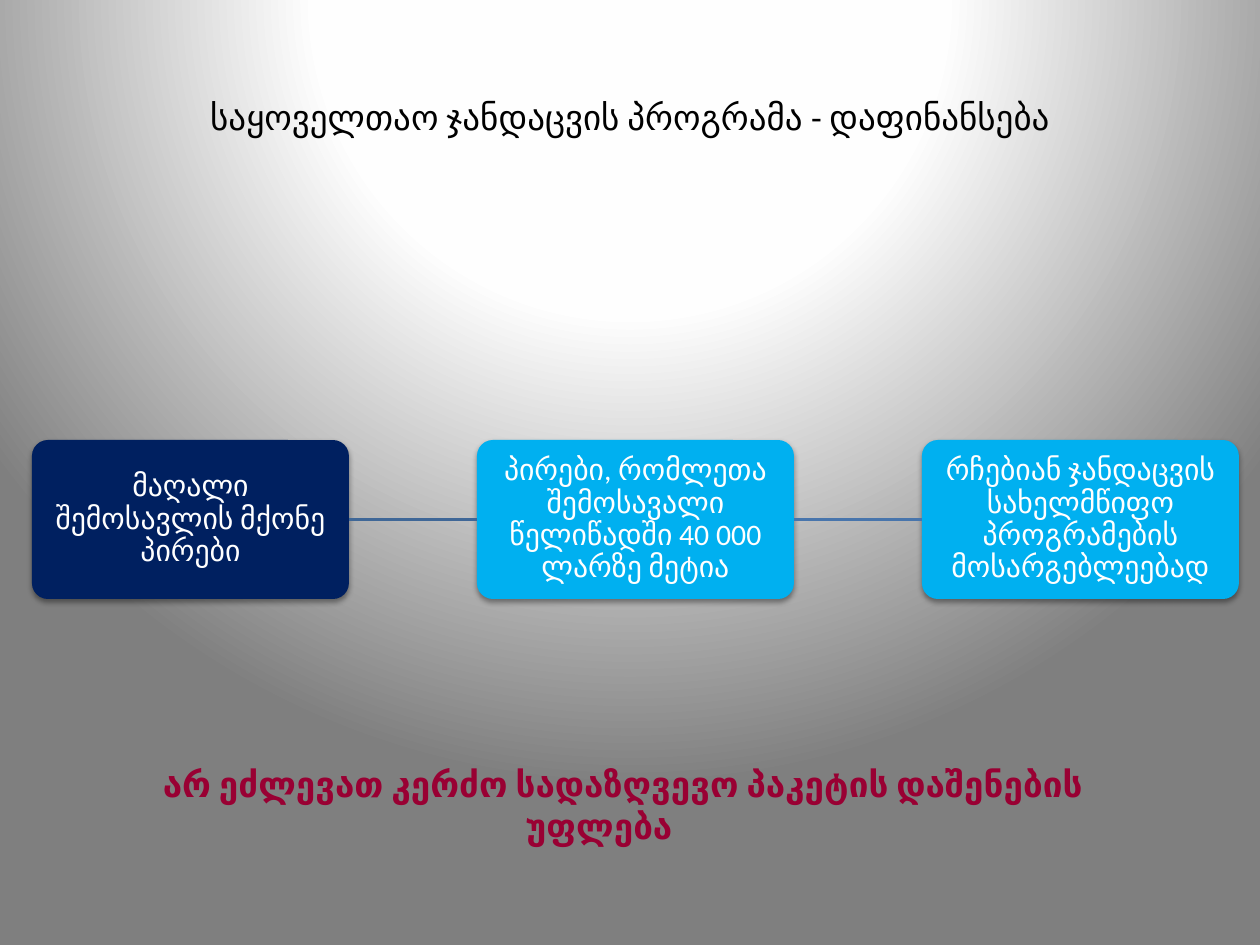
import pptx
import pptx.dml.color
import pptx.enum.shapes
import pptx.enum.text
import pptx.oxml
import pptx.oxml.ns
import pptx.util

PX = 914400 // 126
NS = pptx.oxml.ns.nsdecls("a", "p")
ANCHOR = pptx.enum.text.MSO_ANCHOR


def rgb(code):
    return pptx.dml.color.RGBColor.from_string(code)


def write(sp, text, size=20, color="000000", bold=False, anchor=ANCHOR.MIDDLE,
          margins=(13, 6, 13, 6), spacing=1.0, indent=0):
    """Fill a shape with one centred paragraph; margins are left, top, right, bottom."""
    tf = sp.text_frame
    tf.word_wrap = True
    tf.vertical_anchor = anchor
    tf.margin_left, tf.margin_top, tf.margin_right, tf.margin_bottom = [m * PX for m in margins]
    p = tf.paragraphs[0]
    p.alignment = pptx.enum.text.PP_ALIGN.CENTER
    p.line_spacing = spacing
    if indent:
        p._p.get_or_add_pPr().set("indent", str(indent * PX))
    r = p.add_run()
    r.text = text
    r.font.name = "Calibri"
    r.font.size = pptx.util.Pt(size)
    r.font.bold = bold
    r.font.color.rgb = rgb(color)


prs = pptx.Presentation()
prs.slide_width = pptx.util.Inches(10)
prs.slide_height = pptx.util.Inches(7.5)
s = prs.slides.add_slide(prs.slide_layouts[6])

# Background: light falling from above the slide
s.element.cSld.insert(0, pptx.oxml.parse_xml(f"""
<p:bg {NS}><p:bgPr><a:gradFill rotWithShape="1"><a:gsLst>
  <a:gs pos="0"><a:srgbClr val="FFFFFF"/></a:gs>
  <a:gs pos="40000"><a:srgbClr val="FEFEFE"/></a:gs>
  <a:gs pos="100000"><a:srgbClr val="7F7F7F"/></a:gs>
</a:gsLst><a:path path="circle">
  <a:fillToRect l="50000" t="-80000" r="50000" b="180000"/>
</a:path></a:gradFill><a:effectLst/></p:bgPr></p:bg>"""))

# Title
title = s.shapes.add_textbox(63 * PX, 38 * PX, 1134 * PX, 157 * PX)
write(title, "საყოველთაო ჯანდაცვის პროგრამა - დაფინანსება")

# Chain of three boxes
LEFT, TOP, WIDTH, HEIGHT, STEP = 32, 440, 317, 159, 445
steps = [
    ("მაღალი შემოსავლის მქონე პირები", "002060"),
    ("პირები, რომლეთა შემოსავალი წელიწადში 40 000 ლარზე მეტია", "00B0F0"),
    ("რჩებიან ჯანდაცვის სახელმწიფო პროგრამების მოსარგებლეებად", "00B0F0"),
]
boxes = []
for i, (text, fill) in enumerate(steps):
    sp = s.shapes.add_shape(pptx.enum.shapes.MSO_SHAPE.ROUNDED_RECTANGLE,
                            (LEFT + i * STEP) * PX, TOP * PX, WIDTH * PX, HEIGHT * PX)
    sp.adjustments[0] = 0.1
    sp.fill.solid()
    sp.fill.fore_color.rgb = rgb(fill)
    sp.line.fill.background()
    sp._element.spPr.append(pptx.oxml.parse_xml(f"""
<a:effectLst {NS}><a:outerShdw blurRad="39400" dist="21000" dir="5400000" rotWithShape="0">
  <a:srgbClr val="000000"><a:alpha val="38000"/></a:srgbClr>
</a:outerShdw></a:effectLst>"""))
    write(sp, text, size=17, color="FFFFFF", margins=(6, 6, 6, 6), spacing=0.9)
    boxes.append(sp)

# Links between neighbouring boxes
for start, end, color in zip(boxes, boxes[1:], ("3F6797", "4875AC")):
    link = s.shapes.add_connector(pptx.enum.shapes.MSO_CONNECTOR.STRAIGHT, 0, 0, 0, 0)
    link.begin_connect(start, 3)
    link.end_connect(end, 1)
    link.line.color.rgb = rgb(color)
    link.line.width = pptx.util.Pt(2)
    link._element.spPr.append(pptx.oxml.parse_xml(f"<a:effectLst {NS}/>"))

# Conclusion
conclusion = s.shapes.add_textbox(32 * PX, 746 * PX, 1134 * PX, 157 * PX)
write(conclusion, "არ ეძლევათ კერძო სადაზღვევო პაკეტის დაშენების უფლება",
      color="990033", bold=True, anchor=ANCHOR.TOP, margins=(13, 16, 13, 6), indent=48)

prs.save("out.pptx")
